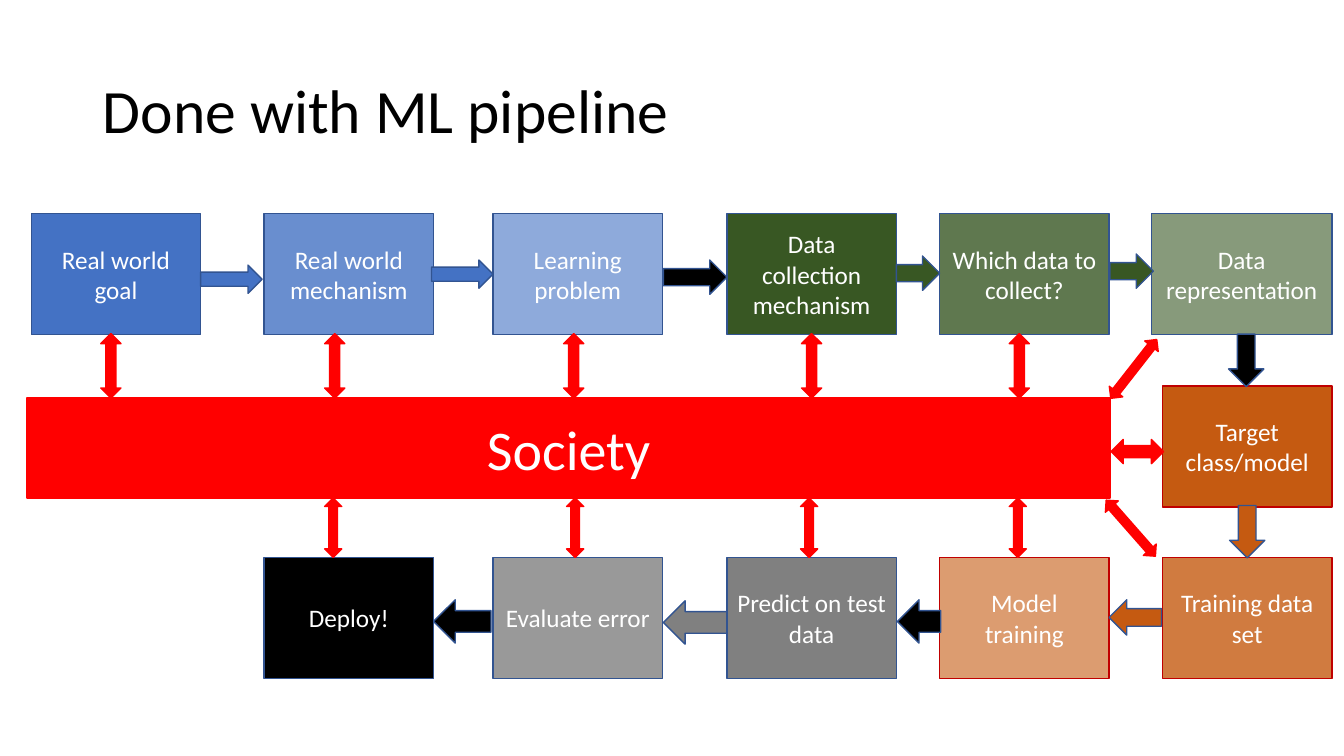
from lxml.etree import SubElement
from pptx import Presentation
from pptx.dml.color import RGBColor
from pptx.enum.shapes import MSO_SHAPE as Shape
from pptx.enum.text import MSO_ANCHOR as Anchor, PP_ALIGN as Align
from pptx.oxml.ns import qn
from pptx.util import Inches, Pt

BLUE = RGBColor(0x44, 0x72, 0xC4)
OUTLINE = RGBColor(0x32, 0x54, 0x91)
GREEN = RGBColor(0x38, 0x57, 0x23)
ORANGE = RGBColor(0xC5, 0x5A, 0x11)
CRIMSON = RGBColor(0xC0, 0x00, 0x00)
GREY = RGBColor(0x80, 0x80, 0x80)
RED = RGBColor(0xFF, 0x00, 0x00)
BLACK = RGBColor(0x00, 0x00, 0x00)
WHITE = RGBColor(0xFF, 0xFF, 0xFF)

COLUMNS = [0.31, 2.62, 4.89, 7.21, 9.32, 11.53]
TOP, MIDDLE, BOTTOM = 2.12, 3.83, 5.53
BOX_WIDTH, WIDE_BOX_WIDTH, BOX_HEIGHT = 1.68, 1.79, 1.2

STEPS = [
    ("Real world goal", COLUMNS[0], TOP, BLUE, 100, OUTLINE),
    ("Real world mechanism", COLUMNS[1], TOP, BLUE, 80, OUTLINE),
    ("Learning problem", COLUMNS[2], TOP, BLUE, 60, OUTLINE),
    ("Data collection mechanism", COLUMNS[3], TOP, GREEN, 100, OUTLINE),
    ("Which data to collect?", COLUMNS[4], TOP, GREEN, 80, OUTLINE),
    ("Data representation", 11.42, TOP, GREEN, 60, OUTLINE, WIDE_BOX_WIDTH),
    ("Target class/model", COLUMNS[5], MIDDLE, ORANGE, 100, CRIMSON),
    ("Training data set", COLUMNS[5], BOTTOM, ORANGE, 80, CRIMSON),
    ("Model training", COLUMNS[4], BOTTOM, ORANGE, 60, CRIMSON),
    ("Predict on test data", COLUMNS[3], BOTTOM, GREY, 100, OUTLINE),
    ("Evaluate error", COLUMNS[2], BOTTOM, GREY, 80, OUTLINE),
    ("Deploy!", COLUMNS[1], BOTTOM, BLACK, 100, OUTLINE),
]

FLOW_ARROWS = [
    (1.99, 2.63, 0.61, 0.28, 0, BLUE),
    (4.28, 2.58, 0.61, 0.28, 0, BLUE),
    (6.58, 2.58, 0.63, 0.34, 0, BLACK),
    (8.89, 2.54, 0.43, 0.34, 0, GREEN),
    (11.01, 2.52, 0.43, 0.34, 0, GREEN),
    (12.1, 3.4, 0.52, 0.35, 90, BLACK),
    (12.11, 5.1, 0.52, 0.35, 90, ORANGE),
    (11, 5.95, 0.52, 0.35, 180, ORANGE),
    (8.9, 5.95, 0.43, 0.43, 180, BLACK),
    (6.58, 5.96, 0.63, 0.43, 180, GREY),
    (4.3, 5.95, 0.57, 0.43, 180, BLACK),
]

SOCIETY_ARROWS = (
    [(left, 3.31, 0.2, 0.64, 0) for left in (1, 3.22, 5.59, 7.95, 10.01)]
    + [(left, 4.94, 0.17, 0.59, 0) for left in (10.01, 7.94, 5.62, 3.22)]
    + [
        (11.16, 4.22, 0.24, 0.52, 90),
        (11.16, 3.29, 0.17, 0.74, 38),
        (11.13, 4.87, 0.17, 0.74, 138.7),
    ]
)


class PipelineSlide:
    font_name = "Calibri"

    def __init__(self, deck):
        self.page = deck.slides.add_slide(deck.slide_layouts[5])

    def label(self, shape, text, size, color, align):
        frame = shape.text_frame
        frame.text = text
        frame.word_wrap = True
        frame.vertical_anchor = Anchor.MIDDLE
        para = frame.paragraphs[0]
        para.alignment = align
        font = para.runs[0].font
        font.name = self.font_name
        font.size = Pt(size)
        font.color.rgb = color
        return para

    def title(self, text, *place):
        title = self.page.shapes.title
        title.left, title.top, title.width, title.height = map(Inches, place)
        self.label(title, text, 44, BLACK, Align.LEFT).line_spacing = 0.9

    def shape(self, kind, place, fill, line, parent=None, rotation=0):
        shapes = (parent or self.page).shapes
        shape = shapes.add_shape(kind, *map(Inches, place))
        shape.shadow.inherit = False
        shape.rotation = rotation
        shape.fill.solid()
        shape.fill.fore_color.rgb = fill
        shape.line.color.rgb = line
        shape.line.width = Pt(1)
        return shape

    def step(self, text, left, top, fill, opacity, line, width=BOX_WIDTH):
        box = self.shape(Shape.RECTANGLE, (left, top, width, BOX_HEIGHT), fill, line)
        if opacity < 100:
            color = box.element.spPr.find(qn("a:solidFill"))[0]
            SubElement(color, qn("a:alpha"), val=str(opacity * 1000))
        self.label(box, text, 18, WHITE, Align.CENTER)

    def flow_arrow(self, left, top, width, height, rotation, fill):
        place = (left, top, width, height)
        self.shape(Shape.RIGHT_ARROW, place, fill, OUTLINE, rotation=rotation)

    def society(self, text, place, arrows):
        group = self.page.shapes.add_group_shape()
        bar = self.shape(Shape.RECTANGLE, place, RED, RED, group)
        self.label(bar, text, 40, WHITE, Align.CENTER)
        for *arrow_place, rotation in arrows:
            self.shape(Shape.UP_DOWN_ARROW, arrow_place, RED, RED, group, rotation)


def main():
    deck = Presentation()
    deck.slide_width, deck.slide_height = Inches(13.33), Inches(7.5)
    slide = PipelineSlide(deck)
    slide.title("Done with ML pipeline", 0.92, 0.4, 11.5, 1.45)
    for step in STEPS:
        slide.step(*step)
    for arrow in FLOW_ARROWS:
        slide.flow_arrow(*arrow)
    slide.society("Society", (0.27, 3.95, 10.74, 0.99), SOCIETY_ARROWS)
    deck.save("out.pptx")


if __name__ == "__main__":
    main()
